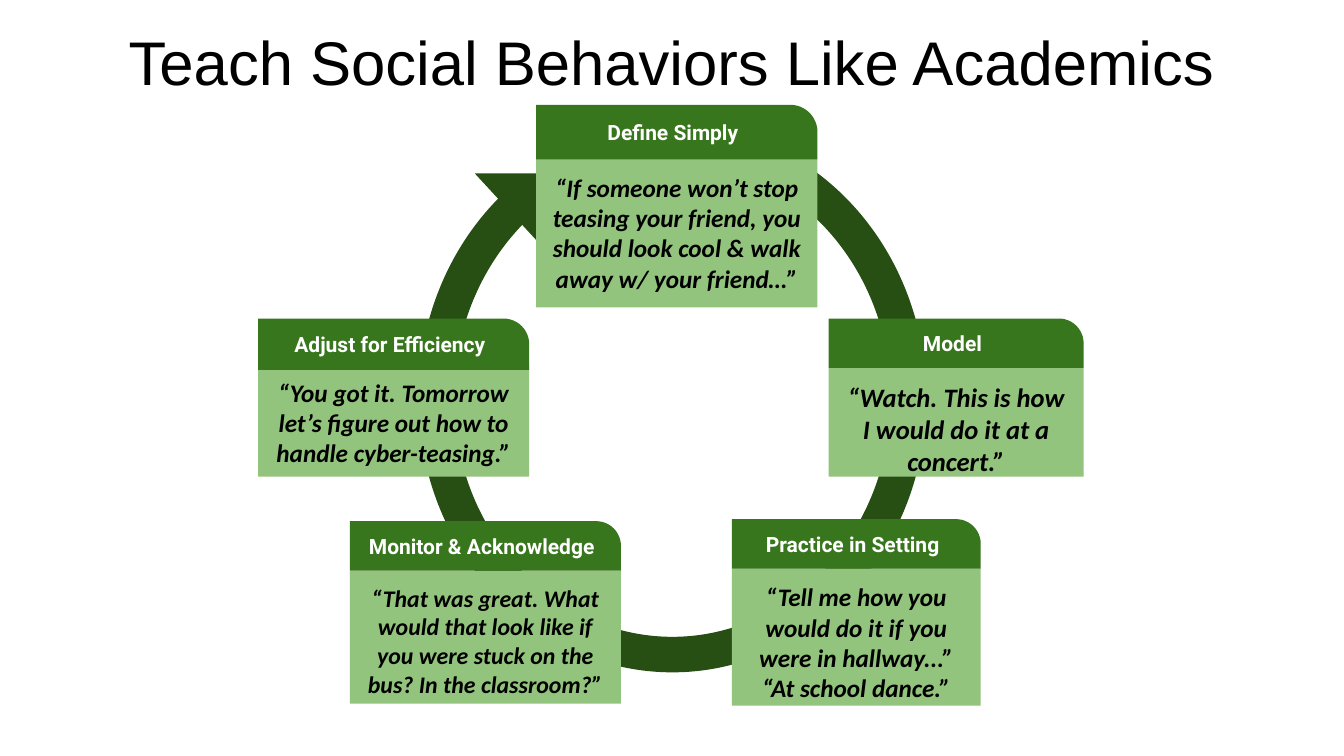
import dataclasses

import pptx
import pptx.dml.color
import pptx.enum.shapes
import pptx.enum.text
import pptx.shapes.autoshape
import pptx.util

SHAPE = pptx.enum.shapes.MSO_SHAPE
ANCHOR = pptx.enum.text.MSO_ANCHOR
SLIDE_WIDTH = pptx.util.Inches(13.33)
SLIDE_HEIGHT = pptx.util.Inches(7.5)
COLUMNS, ROWS = 160, 90


@dataclasses.dataclass(frozen=True)
class Theme:
    ring: str = "274E13"
    heading_fill: str = "38761D"
    quote_fill: str = "93C47D"
    dark_text: str = "000000"
    light_text: str = "FFFFFF"
    title_font: str = "Arial"
    heading_font: str = "Roboto"
    quote_font: str = "Calibri"
    title_size: int = 44
    heading_size: int = 15
    quote_size: int = 18
    quote_size_small: int = 17
    quote_size_large: int = 19
    card_inset: float = 0.13


THEME = Theme()


@dataclasses.dataclass(frozen=True)
class Box:
    column: float
    row: float
    columns: float
    rows: float

    def lengths(self) -> tuple[int, int, int, int]:
        return (
            round(self.column * SLIDE_WIDTH / COLUMNS),
            round(self.row * SLIDE_HEIGHT / ROWS),
            round(self.columns * SLIDE_WIDTH / COLUMNS),
            round(self.rows * SLIDE_HEIGHT / ROWS),
        )


@dataclasses.dataclass(frozen=True)
class Step:
    heading: str
    quote: str
    column: float
    row: float
    columns: float
    heading_rows: float
    quote_rows: float
    quote_size: int = THEME.quote_size
    overlap: float = 0


STEPS = (
    Step("Define Simply",
         "“If someone won’t stop teasing your friend, you should look cool & walk away w/ your friend…”",
         63.84, 12.48, 33.48, 6.48, 17.64),
    Step("Adjust for Efficiency",
         "“You got it. Tomorrow let’s figure out how to handle cyber-teasing.”",
         30.72, 37.92, 32.28, 6.12, 13.44, overlap=0.72),
    Step("Practice in Setting",
         "“Tell me how you would do it if you were in hallway...” “At school dance.”",
         87.12, 61.8, 29.64, 5.88, 16.32),
    Step("Monitor & Acknowledge",
         "“That was great. What would that look like if you were stuck on the bus? In the classroom?”",
         41.64, 62.04, 32.28, 5.88, 15.84, THEME.quote_size_small),
    Step("Model",
         "“Watch. This is how I would do it at a concert.”",
         98.64, 37.92, 30.36, 5.88, 12.96, THEME.quote_size_large),
)

TITLE_FORMAT = {"name": THEME.title_font, "size": pptx.util.Pt(THEME.title_size)}
HEADING_FORMAT = {
    "name": THEME.heading_font,
    "size": pptx.util.Pt(THEME.heading_size),
    "bold": True,
}
QUOTE_FORMAT = {"name": THEME.quote_font, "bold": True, "italic": True}


def color(value: str) -> pptx.dml.color.RGBColor:
    return pptx.dml.color.RGBColor.from_string(value)


def set_attributes(target: object, values: dict) -> None:
    for name, value in values.items():
        setattr(target, name, value)


def add_filled(shapes, kind, box: Box, fill: str,
               adjustments: tuple[float, ...] = (),
               rotation: float = 0) -> pptx.shapes.autoshape.Shape:
    shape = shapes.add_shape(kind, *box.lengths())
    shape.shadow.inherit = False
    shape.fill.solid()
    shape.fill.fore_color.rgb = color(fill)
    shape.line.fill.background()
    shape.rotation = rotation
    for index, value in enumerate(adjustments):
        shape.adjustments[index] = value
    return shape


def write(shape: pptx.shapes.autoshape.Shape, text: str, font_format: dict,
          text_color: str, anchor, horizontal: float, vertical: float,
          line_spacing: float = 1.0) -> None:
    frame = shape.text_frame
    set_attributes(frame, {
        "word_wrap": True,
        "vertical_anchor": anchor,
        "margin_left": pptx.util.Inches(horizontal),
        "margin_right": pptx.util.Inches(horizontal),
        "margin_top": pptx.util.Inches(vertical),
        "margin_bottom": pptx.util.Inches(vertical),
    })
    paragraph = frame.paragraphs[0]
    set_attributes(paragraph, {
        "alignment": pptx.enum.text.PP_ALIGN.CENTER,
        "line_spacing": line_spacing,
    })
    run = paragraph.add_run()
    run.text = text
    set_attributes(run.font, font_format)
    run.font.color.rgb = color(text_color)


def add_title(slide, text: str) -> None:
    title = slide.shapes.add_textbox(*Box(6, 1.8, 148, 12).lengths())
    write(title, text, TITLE_FORMAT, THEME.dark_text, ANCHOR.MIDDLE, 0.1, 0.05, 0.9)


def add_ring(slide) -> None:
    shapes = slide.shapes.add_group_shape().shapes
    add_filled(shapes, SHAPE.BLOCK_ARC, Box(49.8, 14.76, 60.48, 65.28),
               THEME.ring, (54, 30.13, 0.07), 180)
    add_filled(shapes, SHAPE.RIGHT_TRIANGLE, Box(56.52, 20.64, 8.52, 9.24),
               THEME.ring, rotation=180)


def add_step(slide, step: Step) -> None:
    shapes = slide.shapes.add_group_shape().shapes
    quote_row = step.row + step.heading_rows - step.overlap
    quote = add_filled(shapes, SHAPE.RECTANGLE,
                       Box(step.column, quote_row, step.columns, step.quote_rows),
                       THEME.quote_fill)
    write(quote, step.quote, QUOTE_FORMAT | {"size": pptx.util.Pt(step.quote_size)},
          THEME.dark_text, ANCHOR.TOP, THEME.card_inset, THEME.card_inset)
    heading = add_filled(shapes, SHAPE.ROUND_1_RECTANGLE,
                         Box(step.column, step.row, step.columns, step.heading_rows),
                         THEME.heading_fill, (0.5,))
    write(heading, step.heading, HEADING_FORMAT, THEME.light_text,
          ANCHOR.MIDDLE, THEME.card_inset, THEME.card_inset)


def main() -> None:
    presentation = pptx.Presentation()
    presentation.slide_width = SLIDE_WIDTH
    presentation.slide_height = SLIDE_HEIGHT
    slide = presentation.slides.add_slide(presentation.slide_layouts[6])
    add_title(slide, "Teach Social Behaviors Like Academics")
    add_ring(slide)
    for step in STEPS:
        add_step(slide, step)
    presentation.save("out.pptx")


if __name__ == "__main__":
    main()
